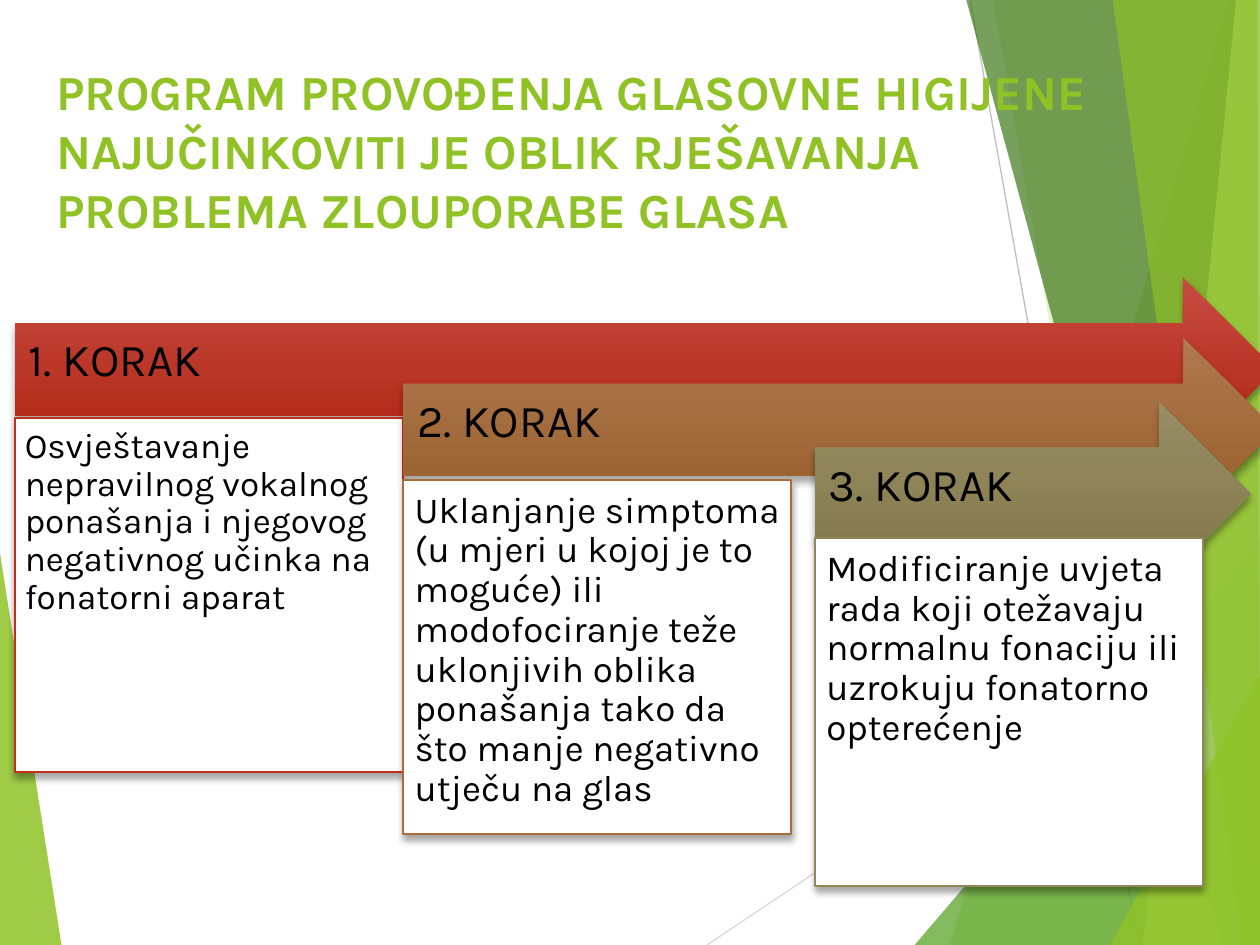
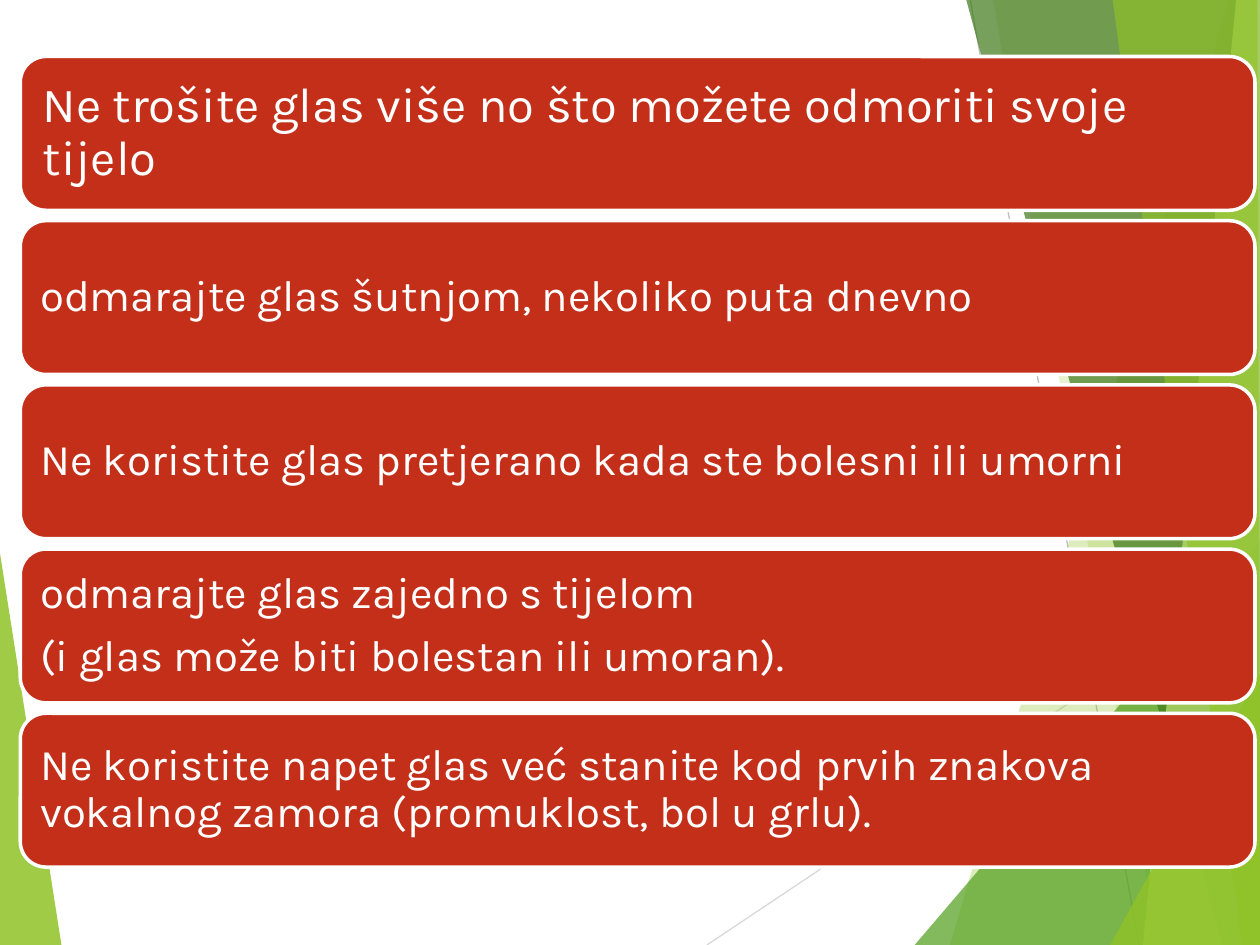
from lxml.etree import SubElement
from pptx import Presentation
from pptx.dml.color import RGBColor
from pptx.enum.shapes import MSO_CONNECTOR, MSO_SHAPE
from pptx.enum.text import MSO_ANCHOR, PP_ALIGN
from pptx.oxml.ns import qn
from pptx.util import Cm, Pt

FONT = "Karla"
WIDTH, HEIGHT = 25.4, 19.05

WHITE = RGBColor(0xFF, 0xFF, 0xFF)
BLACK = RGBColor(0x00, 0x00, 0x00)
LIME = RGBColor(0x90, 0xC2, 0x26)
GREEN = RGBColor(0x54, 0xA0, 0x21)
DARK_GREEN = RGBColor(0x3F, 0x78, 0x19)
PALE_LIME = RGBColor(0xC0, 0xE4, 0x74)
LIGHT_GREY = RGBColor(0xD9, 0xD9, 0xD9)
GREY = RGBColor(0xBF, 0xBF, 0xBF)
RED = RGBColor(0xC4, 0x2F, 0x1A)
RED_TOP = RGBColor(0xC7, 0x4B, 0x42)
RED_BOTTOM = RGBColor(0xB3, 0x2B, 0x18)
BROWN = RGBColor(0xAB, 0x6E, 0x37)
BROWN_TOP = RGBColor(0xAF, 0x78, 0x4F)
BROWN_BOTTOM = RGBColor(0x9C, 0x64, 0x32)
OLIVE = RGBColor(0x91, 0x86, 0x55)
OLIVE_TOP = RGBColor(0x98, 0x8E, 0x64)
OLIVE_BOTTOM = RGBColor(0x85, 0x7B, 0x4E)

# Background, back to front: colour, opacity in percent, corners in cm
LEFT_FACET = (LIME, 85, [(0, 11.15), (1.24, HEIGHT), (0, HEIGHT)])
RIGHT_FACETS = [
    (LIME, 30, [(24.77, 0), (19.15, HEIGHT), (WIDTH, HEIGHT), (WIDTH, 0)]),
    (LIME, 20, [(20.02, 0), (23.34, HEIGHT), (WIDTH, HEIGHT), (WIDTH, 0)]),
    (GREEN, 72, [(18.44, HEIGHT), (WIDTH, 10.9), (WIDTH, HEIGHT)]),
    (DARK_GREEN, 70, [(19.48, 0), (24.64, HEIGHT), (WIDTH, HEIGHT), (WIDTH, 0)]),
    (PALE_LIME, 70, [(24.92, 0), (23.04, HEIGHT), (WIDTH, HEIGHT), (WIDTH, 0)]),
    (LIME, 65, [(22.43, 0), (25.04, HEIGHT), (WIDTH, HEIGHT), (25.35, 0)]),
    (LIME, 80, [(22.38, HEIGHT), (WIDTH, 13.59), (WIDTH, HEIGHT)]),
]
RAYS = [
    (LIGHT_GREY, (14.25, HEIGHT, WIDTH, 11.6)),
    (GREY, (19.56, 0, 22.96, HEIGHT)),
]

TITLE = ("PROGRAM PROVOĐENJA GLASOVNE HIGIJENE NAJUČINKOVITI JE OBLIK "
         "RJEŠAVANJA PROBLEMA ZLOUPORABE GLASA")

# Arrow area, box top and height, text size, inset, colours, text
STEPS = [
    ((0.3, 5.59, 25.4, 3.71), 8.43, 7.14, 20, 0.2, (RED_TOP, RED_BOTTOM, RED),
     "Osvještavanje nepravilnog vokalnog ponašanja i njegovog negativnog "
     "učinka na fonatorni aparat"),
    ((8.13, 6.81, 17.58, 3.71), 9.68, 7.14, 21, 0.23, (BROWN_TOP, BROWN_BOTTOM, BROWN),
     "Uklanjanje simptoma (u mjeri u kojoj je to moguće) ili modofociranje "
     "teže uklonjivih oblika ponašanja tako da što manje negativno utječu na glas"),
    ((16.43, 8.1, 8.79, 3.71), 10.85, 7.01, 21, 0.23, (OLIVE_TOP, OLIVE_BOTTOM, OLIVE),
     "Modificiranje uvjeta rada koji otežavaju normalnu fonaciju ili uzrokuju "
     "fonatorno opterećenje"),
]
STEP_BOX_WIDTH = 7.82

# Text size, inset, paragraphs
ADVICE = [
    (28, 0.3, ["Ne trošite glas više no što možete odmoriti svoje tijelo"]),
    (25, 0.25, ["odmarajte glas šutnjom, nekoliko puta dnevno"]),
    (25, 0.25, ["Ne koristite glas pretjerano kada ste bolesni ili umorni"]),
    (25, 0.25, ["odmarajte glas zajedno s tijelom",
                "(i glas može biti bolestan ili umoran)."]),
    (25, 0.25, ["Ne koristite napet glas već stanite kod prvih znakova vokalnog "
                "zamora (promuklost, bol u grlu)."]),
]
ADVICE_TOP, ADVICE_HEIGHT, ADVICE_PITCH = 1.14, 3.1, 3.31


def write(shape, paragraphs, size, color, insets, anchor=MSO_ANCHOR.TOP,
          bold=False, line_spacing=0.9):
    frame = shape.text_frame
    frame.word_wrap = True
    frame.vertical_anchor = anchor
    (frame.margin_left, frame.margin_top,
     frame.margin_right, frame.margin_bottom) = [Cm(inset) for inset in insets]
    for index, text in enumerate(paragraphs):
        paragraph = frame.add_paragraph() if index else frame.paragraphs[0]
        paragraph.alignment = PP_ALIGN.LEFT
        paragraph.line_spacing = line_spacing
        if index:
            paragraph.space_before = Pt(round(size * 0.35))
        run = paragraph.add_run()
        run.text = text
        run.font.name = FONT
        run.font.size = Pt(size)
        run.font.bold = bold
        run.font.color.rgb = color


def add_preset(slide, preset, area):
    shape = slide.shapes.add_shape(preset, *[Cm(length) for length in area])
    shape.shadow.inherit = False
    return shape


def fill_and_outline(shape, fill, outline, width):
    shape.fill.solid()
    shape.fill.fore_color.rgb = fill
    shape.line.color.rgb = outline
    shape.line.width = Pt(width)


def drop_shadow(shape):
    effects = shape.element.spPr.find(qn("a:effectLst"))
    shadow = SubElement(effects, qn("a:outerShdw"), blurRad=str(Pt(4)),
                        dist=str(Pt(3)), dir="5400000", rotWithShape="0")
    black = SubElement(shadow, qn("a:srgbClr"), val=str(BLACK))
    SubElement(black, qn("a:alpha"), val="35000")


def add_facet(slide, color, opacity, corners):
    points = [(Cm(x), Cm(y)) for x, y in corners]
    builder = slide.shapes.build_freeform(*points[0])
    builder.add_line_segments(points[1:], close=True)
    facet = builder.convert_to_shape()
    facet.shadow.inherit = False
    facet.fill.solid()
    facet.fill.fore_color.rgb = color
    facet.line.fill.background()
    tint = facet.element.spPr.find(qn("a:solidFill"))[0]
    SubElement(tint, qn("a:alpha"), val=str(opacity * 1000))


def add_ray(slide, color, ends):
    ray = slide.shapes.add_connector(MSO_CONNECTOR.STRAIGHT,
                                     *[Cm(length) for length in ends])
    ray.line.color.rgb = color
    ray.line.width = Pt(0.75)
    SubElement(ray.element.spPr, qn("a:effectLst"))


def add_themed_slide(deck):
    slide = deck.slides.add_slide(deck.slide_layouts[6])
    slide.background.fill.solid()
    slide.background.fill.fore_color.rgb = WHITE
    add_facet(slide, *LEFT_FACET)
    for ray in RAYS:
        add_ray(slide, *ray)
    for facet in RIGHT_FACETS:
        add_facet(slide, *facet)
    return slide


def add_title(slide, text):
    title = slide.shapes.add_textbox(Cm(0.89), Cm(1.12), Cm(22), Cm(5))
    write(title, [text], 28, LIME, (0.25, 0.13, 0.25, 0.13), bold=True,
          line_spacing=1.0)


def add_step_arrow(slide, area, label, top_color, bottom_color):
    arrow = add_preset(slide, MSO_SHAPE.RIGHT_ARROW, area)
    arrow.fill.gradient()
    arrow.fill.gradient_angle = 270
    shades = [(0, top_color), (0.78, bottom_color)]
    for stop, (position, color) in zip(arrow.fill.gradient_stops, shades):
        stop.position = position
        stop.color.rgb = color
    arrow.line.fill.background()
    drop_shadow(arrow)
    write(arrow, [label], 26, BLACK, (0.28, 0.28, 0.71, 0.58), MSO_ANCHOR.MIDDLE)


def add_step_box(slide, area, text, size, inset, outline):
    box = add_preset(slide, MSO_SHAPE.RECTANGLE, area)
    fill_and_outline(box, WHITE, outline, 1)
    drop_shadow(box)
    write(box, [text], size, BLACK, [inset] * 4)


def add_advice(slide, top, size, inset, paragraphs):
    bar = add_preset(slide, MSO_SHAPE.ROUNDED_RECTANGLE,
                     (0.41, top, 24.89, ADVICE_HEIGHT))
    fill_and_outline(bar, RED, WHITE, 2)
    write(bar, paragraphs, size, WHITE, [inset] * 4, MSO_ANCHOR.MIDDLE)


def main():
    deck = Presentation()
    deck.slide_width, deck.slide_height = Cm(WIDTH), Cm(HEIGHT)

    # Three steps of the programme
    programme = add_themed_slide(deck)
    add_title(programme, TITLE)
    for number, step in enumerate(STEPS, start=1):
        arrow_area, box_top, box_height, size, inset, colors, text = step
        top_color, bottom_color, outline = colors
        add_step_arrow(programme, arrow_area, f"{number}. KORAK",
                       top_color, bottom_color)
        box_area = (arrow_area[0], box_top, STEP_BOX_WIDTH, box_height)
        add_step_box(programme, box_area, text, size, inset, outline)

    # Advice on resting the voice
    resting = add_themed_slide(deck)
    for row, advice in enumerate(ADVICE):
        add_advice(resting, ADVICE_TOP + row * ADVICE_PITCH, *advice)

    deck.save("out.pptx")


if __name__ == "__main__":
    main()
